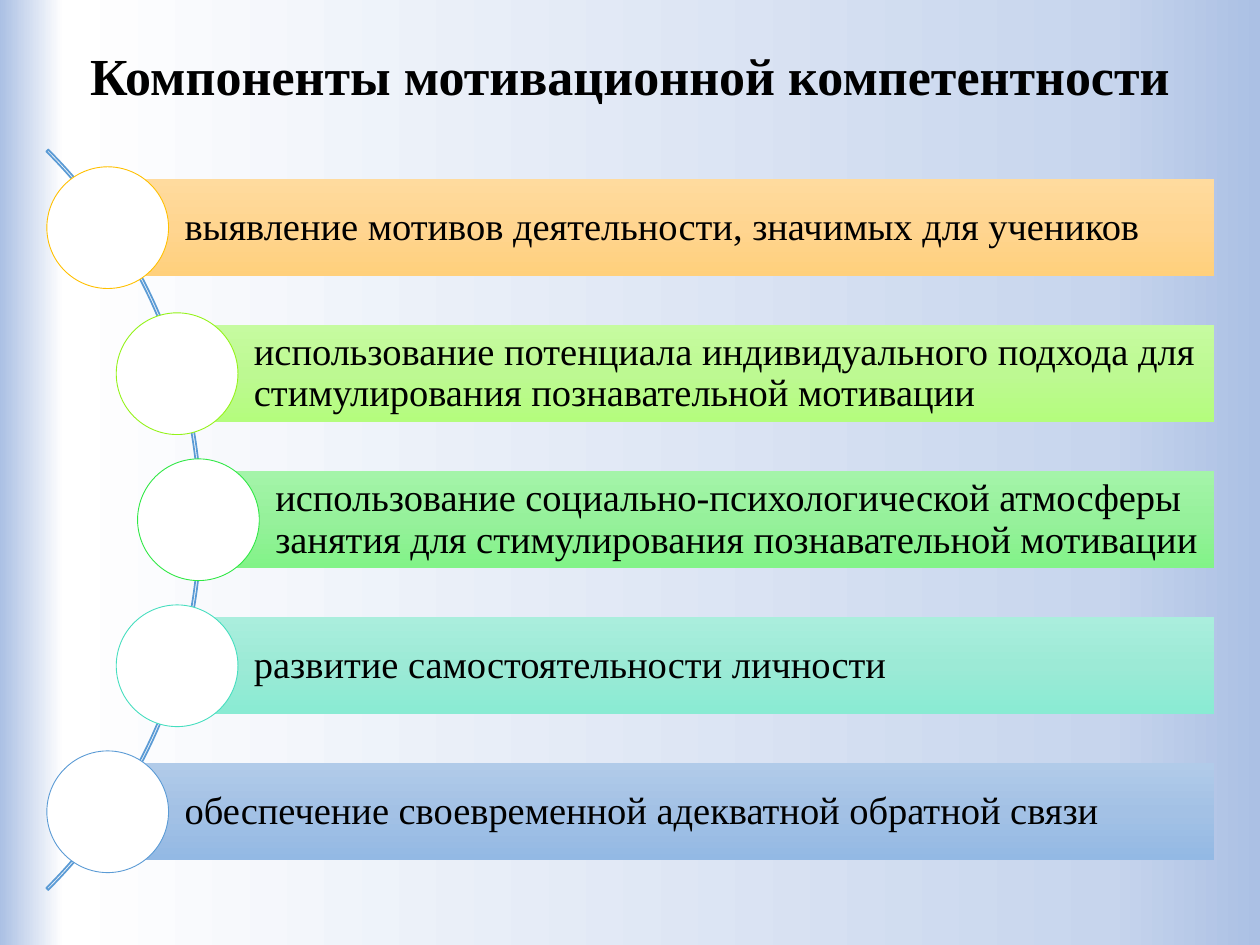
from lxml import etree
from pptx import Presentation
from pptx.dml.color import RGBColor
from pptx.enum.shapes import MSO_SHAPE as SHAPE
from pptx.enum.text import MSO_ANCHOR as ANCHOR, MSO_AUTO_SIZE as AUTO, PP_ALIGN as ALIGN
from pptx.oxml.ns import qn
from pptx.util import Inches, Pt

COLS, ROWS = 100, 75
TITLE = "Компоненты мотивационной компетентности"
COMPONENTS = [
    ("выявление мотивов деятельности, значимых для учеников",
     8.55, "FFC000", ("FFDB9E", "FFD590", "FFD07C")),
    ("использование потенциала индивидуального подхода для стимулирования познавательной мотивации",
     14.06, "94F319", ("C6FBA0", "BDF992", "B4FD7D")),
    ("использование социально-психологической атмосферы занятия для стимулирования познавательной мотивации",
     15.75, "30E845", ("A4F4A9", "96F19B", "82F388")),
    ("развитие самостоятельности личности",
     14.06, "46DEBF", ("AAEEDD", "9CEAD6", "89EBD3")),
    ("обеспечение своевременной адекватной обратной связи",
     8.55, "5B9BD5", ("B1CBE9", "A3C1E5", "93B9E4")),
]


def color(value):
    return RGBColor.from_string(value)


def write(tf, text, size=22, bold=False, align=ALIGN.LEFT, font="Times New Roman", ink="000000"):
    tf.word_wrap = True
    tf.auto_size = AUTO.NONE
    tf.vertical_anchor = ANCHOR.MIDDLE
    p = tf.paragraphs[0]
    p.alignment, p.line_spacing = align, 0.9
    r = p.add_run()
    r.text = text
    r.font.name, r.font.size, r.font.bold = font, Pt(size), bold
    r.font.color.rgb = color(ink)


def gradient(fill, element, stops, angle):
    fill.gradient()
    fill.gradient_angle = angle
    stop_list = next(element.iter(qn("a:gsLst")))
    for old in list(stop_list):
        stop_list.remove(old)
    for position, value in stops:
        stop = etree.SubElement(stop_list, qn("a:gs"), pos=str(position * 1000))
        etree.SubElement(stop, qn("a:srgbClr"), val=value)


class Deck:
    def __init__(self):
        self.prs = Presentation()
        self.prs.slide_width, self.prs.slide_height = Inches(10), Inches(7.5)
        self.col = self.prs.slide_width / COLS
        self.row = self.prs.slide_height / ROWS
        self.s = self.prs.slides.add_slide(self.prs.slide_layouts[5])

    def box(self, x, y, w, h):
        return [round(n) for n in (x * self.col, y * self.row, w * self.col, h * self.row)]

    def background(self, stops):
        gradient(self.s.background.fill, self.s._element, stops, 180)

    def title(self, text, *at):
        sp = self.s.shapes.title
        sp.left, sp.top, sp.width, sp.height = self.box(*at)
        write(sp.text_frame, text, size=29.7, bold=True, align=ALIGN.CENTER)

    def shape(self, kind, at, fill=None, line=None, weight=0.5):
        sp = self.s.shapes.add_shape(kind, *self.box(*at))
        sp.shadow.inherit = False
        if fill:
            sp.fill.solid()
            sp.fill.fore_color.rgb = color(fill)
        else:
            sp.fill.background()
        if line:
            sp.line.color.rgb = color(line)
            sp.line.width = Pt(weight)
        else:
            sp.line.fill.background()
        return sp

    def arc(self, cx, cy, radius, line):
        at = (cx - radius, cy - radius, 2 * radius, 2 * radius)
        sp = self.shape(SHAPE.BLOCK_ARC, at, line=line, weight=1)
        for i, value in enumerate((189, 27, 0.0026)):
            sp.adjustments[i] = value

    def bar(self, text, left, right, cy, height, colors):
        sp = self.shape(SHAPE.RECTANGLE, (left, cy - height / 2, right - left, height))
        gradient(sp.fill, sp._element, zip((0, 50, 100), colors), 270)
        tf = sp.text_frame
        tf.margin_left = Inches(0.61)
        tf.margin_right = tf.margin_top = tf.margin_bottom = Inches(0.06)
        write(tf, text)

    def circle(self, cx, cy, size, line):
        self.shape(SHAPE.OVAL, (cx - size / 2, cy - size / 2, size, size), "FFFFFF", line)


def main():
    deck = Deck()
    deck.background([(0, "ABC0E4"), (12, "C7D5ED"), (95, "FFFFFF"), (100, "ABC0E4")])
    deck.title(TITLE, 2.8, 2.1, 94.5, 8.3)
    middle, step = 41.25, 11.59
    deck.arc(-25.55, middle, 41.55, "5B9BD5")
    for i, (text, cx, line, colors) in enumerate(COMPONENTS):
        cy = middle + (i - 2) * step
        deck.bar(text, cx, 96.35, cy, 7.72, colors)
        deck.circle(cx, cy, 9.66, line)
    deck.prs.save("out.pptx")


if __name__ == "__main__":
    main()
